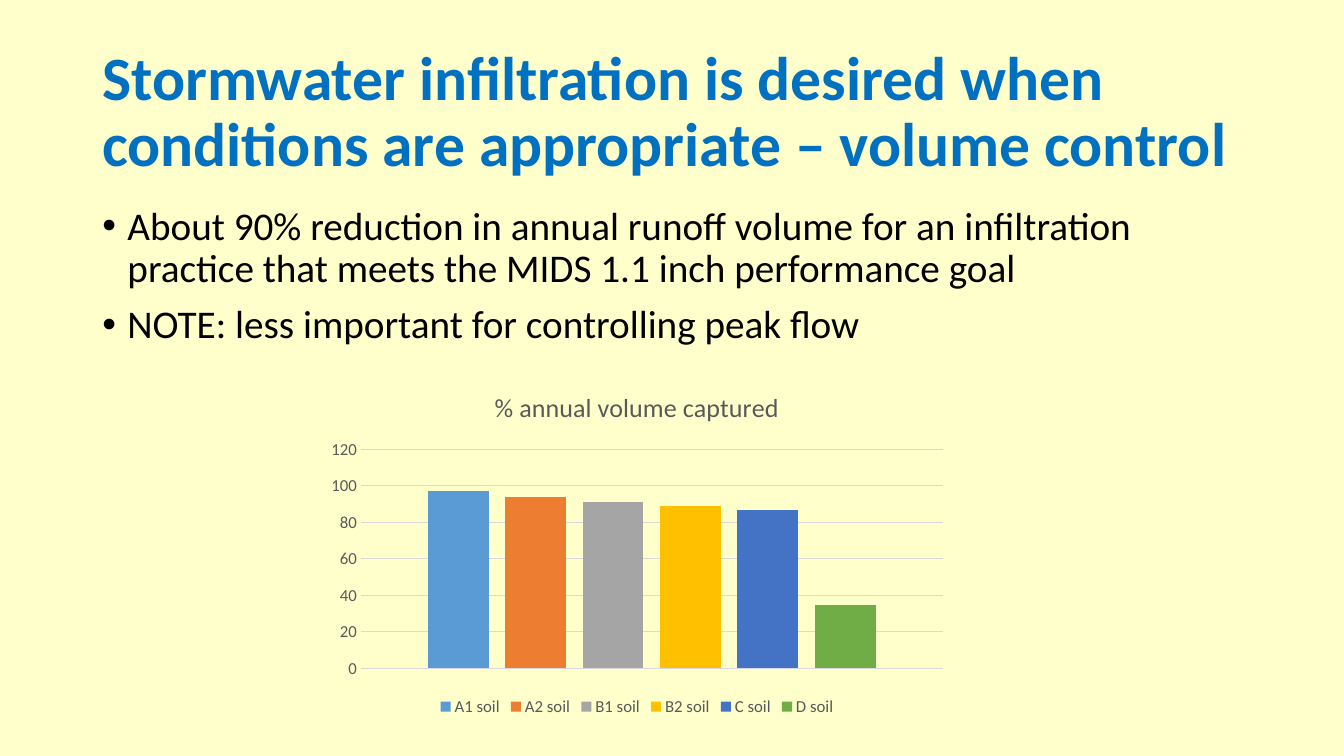
"""Build a slide on stormwater infiltration and the annual volume captured by soil type."""
from lxml import etree
from pptx import Presentation
from pptx.chart.data import CategoryChartData
from pptx.dml.color import RGBColor
from pptx.enum.chart import XL_CHART_TYPE, XL_LEGEND_POSITION, XL_TICK_MARK
from pptx.enum.text import MSO_ANCHOR
from pptx.oxml.ns import qn
from pptx.util import Pt

COLUMNS = XL_CHART_TYPE.COLUMN_CLUSTERED
LEGEND_BOTTOM = XL_LEGEND_POSITION.BOTTOM
NO_TICKS = XL_TICK_MARK.NONE
TOP, MIDDLE = MSO_ANCHOR.TOP, MSO_ANCHOR.MIDDLE

HEADING = "Stormwater infiltration is desired when conditions are appropriate – volume control"
POINTS = [
    "About 90% reduction in annual runoff volume for an infiltration practice "
    "that meets the MIDS 1.1 inch performance goal",
    "NOTE: less important for controlling peak flow",
]
CHART_TITLE = "% annual volume captured"
CAPTURED = [
    ("A1 soil", 97, "5B9BD5"),
    ("A2 soil", 94, "ED7D31"),
    ("B1 soil", 91, "A5A5A5"),
    ("B2 soil", 89, "FFC000"),
    ("C soil", 87, "4472C4"),
    ("D soil", 35, "70AD47"),
]

THEME = {
    "font": "Calibri",
    "background": "FFFFCC", "heading": "0070C0", "body": "000000",
    "chart_text": "595959", "grid": "D9D9D9",
    "heading_size": 44, "body_size": 28, "chart_title_size": 18.6, "label_size": 12,
}

SLIDE_SIZE = (960, 540)
MARGIN = 66
CONTENT_WIDTH = SLIDE_SIZE[0] - 2 * MARGIN
HEADING_BOX = (MARGIN, 28.75, CONTENT_WIDTH, 104.4)
POINTS_BOX = (MARGIN, 143.75, CONTENT_WIDTH, 342.6)
CHART_BOX = (227.5, 265.7, 455, 249.1)
BULLET_INDENT = 18


def style(font, size, color, bold=False):
    font.name = THEME["font"]
    font.size = Pt(size)
    font.bold = bold
    font.color.rgb = RGBColor.from_string(color)


def add_text(slide, lines, *, box, size, color, bold=False, anchor=TOP, before=0, bullet=None):
    frame = slide.shapes.add_textbox(*map(Pt, box)).text_frame
    frame.word_wrap = True
    frame.vertical_anchor = anchor
    for index, line in enumerate(lines):
        paragraph = frame.add_paragraph() if index else frame.paragraphs[0]
        paragraph.line_spacing = 0.9
        paragraph.space_before = Pt(before)
        run = paragraph.add_run()
        run.text = line
        style(run.font, size, color, bold)
        if bullet:
            properties = paragraph._p.get_or_add_pPr()
            properties.set("marL", str(Pt(BULLET_INDENT)))
            properties.set("indent", str(-Pt(BULLET_INDENT)))
            etree.SubElement(properties, qn("a:buFont"), typeface="Arial")
            etree.SubElement(properties, qn("a:buChar"), char=bullet)


def add_captured_chart(slide):
    captured = CategoryChartData()
    captured.categories = ["1"]
    for soil, percent, _ in CAPTURED:
        captured.add_series(soil, [percent])
    chart = slide.shapes.add_chart(COLUMNS, *map(Pt, CHART_BOX), captured).chart
    style(chart.font, THEME["label_size"], THEME["chart_text"])

    chart.has_title = True
    title = chart.chart_title
    title.include_in_layout = False
    title.text_frame.text = CHART_TITLE
    style(title.text_frame.paragraphs[0].runs[0].font,
          THEME["chart_title_size"], THEME["chart_text"])

    chart.has_legend = True
    chart.legend.position = LEGEND_BOTTOM
    chart.legend.include_in_layout = False
    style(chart.legend.font, THEME["label_size"], THEME["chart_text"])

    chart.category_axis.visible = False
    percent_axis = chart.value_axis
    percent_axis.minimum_scale, percent_axis.maximum_scale = 0, 120
    percent_axis.major_unit = 20
    percent_axis.major_tick_mark = percent_axis.minor_tick_mark = NO_TICKS
    percent_axis.format.line.fill.background()
    style(percent_axis.tick_labels.font, THEME["label_size"], THEME["chart_text"])
    grid = percent_axis.major_gridlines.format.line
    grid.color.rgb = RGBColor.from_string(THEME["grid"])
    grid.width = Pt(0.75)

    bars = chart.plots[0]
    bars.vary_by_categories = False
    bars.gap_width, bars.overlap = 219, -27
    for series, (_, _, color) in zip(bars.series, CAPTURED):
        series.format.fill.solid()
        series.format.fill.fore_color.rgb = RGBColor.from_string(color)


def main():
    deck = Presentation()
    deck.slide_width, deck.slide_height = map(Pt, SLIDE_SIZE)
    slide = deck.slides.add_slide(deck.slide_layouts[6])
    slide.background.fill.solid()
    slide.background.fill.fore_color.rgb = RGBColor.from_string(THEME["background"])

    add_text(slide, [HEADING], box=HEADING_BOX, size=THEME["heading_size"],
             color=THEME["heading"], bold=True, anchor=MIDDLE)
    add_text(slide, POINTS, box=POINTS_BOX, size=THEME["body_size"],
             color=THEME["body"], before=10, bullet="•")
    add_captured_chart(slide)
    deck.save("out.pptx")


if __name__ == "__main__":
    main()
